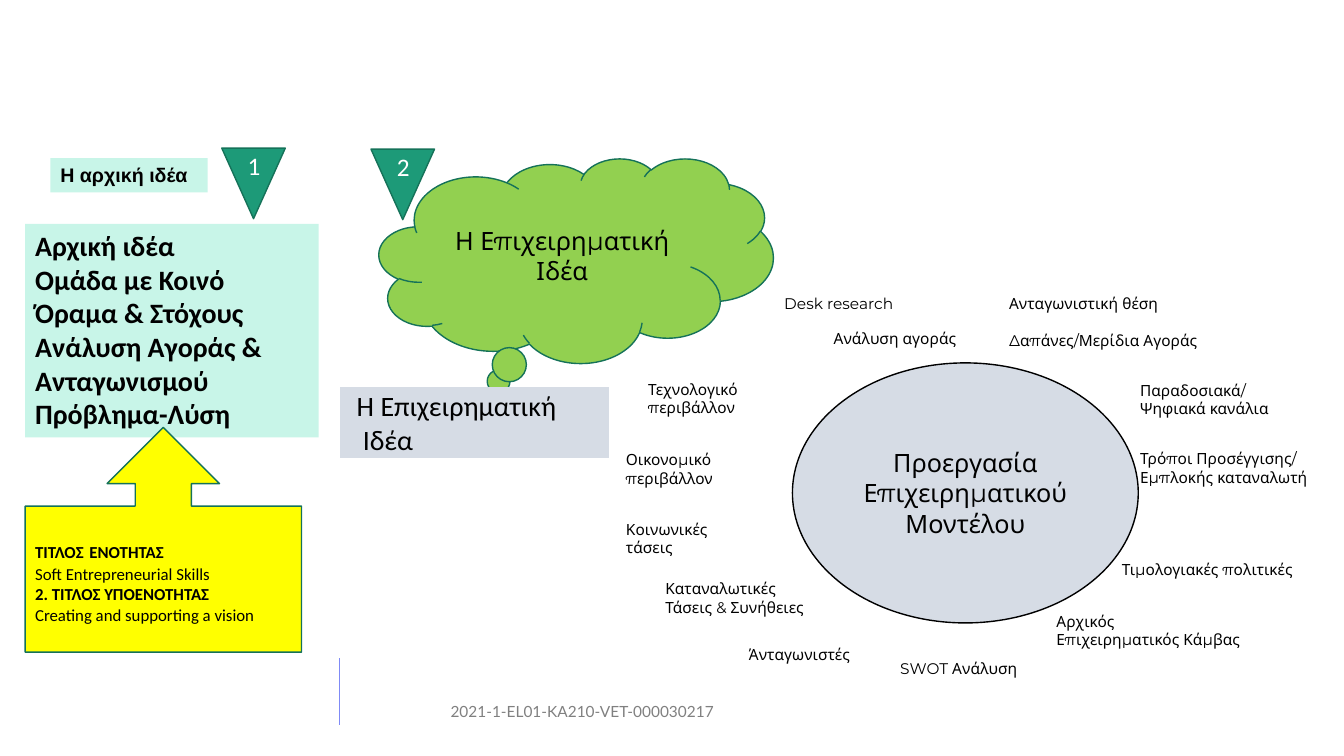
from lxml.etree import SubElement
from pptx import Presentation
from pptx.dml.color import RGBColor
from pptx.enum.shapes import MSO_CONNECTOR, MSO_SHAPE
from pptx.enum.text import MSO_ANCHOR, PP_ALIGN
from pptx.oxml.ns import qn
from pptx.util import Inches, Pt

COLORS = {
    "black": "000000", "white": "FFFFFF", "grey": "808080", "rule": "7F8AF6",
    "lime": "92D050", "pale": "D6DCE5", "mint": "C8F5E8", "green": "1D9A78",
    "edge": "157259", "yellow": "FFFF00",
}

LABELS = [
    (7.68, 2.87, 1.47, ["Desk research"]),
    (8.17, 3.22, 1.58, ["Ανάλυση αγοράς"]),
    (9.91, 2.87, 1.9, ["Ανταγωνιστική θέση"]),
    (9.91, 3.24, 2.24, ["Δαπάνες/Μερίδια Αγοράς"]),
    (11.21, 3.73, 1.73, ["Παραδοσιακά/", "Ψηφιακά κανάλια"]),
    (11.21, 4.41, 2.12, ["Τρόποι Προσέγγισης/", "Εμπλοκής καταναλωτή"]),
    (11.03, 5.51, 2.1, ["Τιμολογιακές πολιτικές"]),
    (10.38, 6.02, 2.27, ["Αρχικός", "Επιχειρηματικός Κάμβας"]),
    (8.83, 6.49, 1.5, ["SWOT Ανάλυση"]),
    (7.33, 6.35, 1.34, ["Άνταγωνιστές"]),
    (6.5, 5.7, 1.81, ["Καταναλωτικές", "Τάσεις & Συνήθειες"]),
    (6.11, 5.11, 1.19, ["Κοινωνικές", "τάσεις"]),
    (6.11, 4.42, 1.56, ["Οικονομικό", "περιβάλλον"]),
    (6.33, 3.72, 1.53, ["Τεχνολογικό", "περιβάλλον"]),
]


def rgb(name):
    return RGBColor.from_string(COLORS[name])


class Deck:
    """Holds the text style and the current slide."""

    def __init__(self, s, font, size):
        self.s, self.font, self.size = s, font, size

    def add_lines(self, sp, lines, font=None, size=None, color="black",
                  bold=False, align=PP_ALIGN.LEFT, anchor=MSO_ANCHOR.TOP):
        tf = sp.text_frame
        tf.word_wrap = True
        tf.vertical_anchor = anchor
        size = size or self.size
        for i, line in enumerate(lines):
            p = tf.paragraphs[0] if i == 0 else tf.add_paragraph()
            p.alignment = align
            runs = [(line, size, bold)] if isinstance(line, str) else line
            for text, run_size, run_bold in runs:
                r = p.add_run()
                r.text = text
                r.font.name = font or self.font
                r.font.size = Pt(run_size)
                r.font.bold = run_bold
                r.font.color.rgb = rgb(color)
        return sp

    def text(self, x, y, w, h, lines, **style):
        sp = self.s.shapes.add_textbox(Inches(x), Inches(y), Inches(w), Inches(h))
        return self.add_lines(sp, lines, **style)

    def shape(self, kind, x, y, w, h, fill, lines, line=None, **style):
        sp = self.s.shapes.add_shape(kind, Inches(x), Inches(y), Inches(w), Inches(h))
        sp.shadow.inherit = False
        sp.fill.solid()
        sp.fill.fore_color.rgb = rgb(fill)
        if line:
            sp.line.color.rgb = rgb(line)
            sp.line.width = Pt(1)
        else:
            sp.line.fill.background()
        return self.add_lines(sp, lines, **style)

    def rule(self, x1, y1, x2, y2, color):
        c = self.s.shapes.add_connector(MSO_CONNECTOR.STRAIGHT, Inches(x1),
                                        Inches(y1), Inches(x2), Inches(y2))
        c.line.color.rgb = rgb(color)
        c.line.width = Pt(1)
        SubElement(c.element.spPr, qn("a:effectLst"))


def main():
    prs = Presentation()
    prs.slide_width, prs.slide_height = Inches(13.33), Inches(7.5)
    d = Deck(prs.slides.add_slide(prs.slide_layouts[6]), "Montserrat", 11)
    centred = {"align": PP_ALIGN.CENTER, "anchor": MSO_ANCHOR.MIDDLE}

    d.rule(3.37, 6.53, 3.37, 7.19, "rule")
    d.text(4.37, 6.92, 3.63, 0.29, ["2021-1-EL01-KA210-VET-000030217"],
           font="Lato", color="grey")

    d.shape(MSO_SHAPE.CLOUD_CALLOUT, 3.76, 1.57, 3.91, 2.03, "lime",
            ["Η Επιχειρηματική Ιδέα"], line="edge", size=18, **centred)
    idea = d.shape(MSO_SHAPE.FLOWCHART_PROCESS, 3.37, 3.84, 2.67, 0.7, "pale",
                   ["Η Επιχειρηματική", "Ιδέα"], font="Calibri", size=20,
                   anchor=MSO_ANCHOR.MIDDLE)
    for p, indent in zip(idea.text_frame.paragraphs, (0.07, 0.13)):
        pPr = p._p.get_or_add_pPr()
        pPr.set("marL", str(Inches(indent)))
        pPr.set("indent", "0")

    d.shape(MSO_SHAPE.RECTANGLE, 0.25, 2.22, 2.91, 2.12, "mint",
            ["Αρχική ιδέα", "Ομάδα με Κοινό Όραμα & Στόχους",
             "Ανάλυση Αγοράς &", "Ανταγωνισμού", "Πρόβλημα-Λύση"],
            font="Calibri", size=20, bold=True)
    d.shape(MSO_SHAPE.RECTANGLE, 0.5, 1.57, 1.56, 0.34, "mint",
            ["Η αρχική ιδέα"], font="Arial", size=14, bold=True)
    for number, x, y in (("2", 3.68, 1.48), ("1", 2.2, 1.47)):
        d.shape(MSO_SHAPE.FLOWCHART_MERGE, x, y, 0.63, 0.7, "green", [number],
                line="edge", font="Calibri", size=18, color="white", **centred)

    d.shape(MSO_SHAPE.OVAL, 7.86, 3.6, 3.43, 2.58, "pale",
            ["Προεργασία Επιχειρηματικού Μοντέλου"], line="black", size=18,
            **centred)
    for x, y, w, lines in LABELS:
        d.text(x, y, w, 0.11 + 0.18 * len(lines), lines)

    d.shape(MSO_SHAPE.UP_ARROW_CALLOUT, 0.25, 4.24, 2.74, 2.23, "yellow",
            [[("ΤΙΤΛΟΣ", 12, True), (" ", 18, True), ("ΕΝΟΤΗΤΑΣ", 12, True)],
             "Soft Entrepreneurial Skills",
             [("2. ΤΙΤΛΟΣ ΥΠΟΕΝΟΤΗΤΑΣ", 12, True)],
             "Creating and supporting a vision"],
            line="edge", font="Calibri", size=12, anchor=MSO_ANCHOR.MIDDLE)
    prs.save("out.pptx")


if __name__ == "__main__":
    main()
